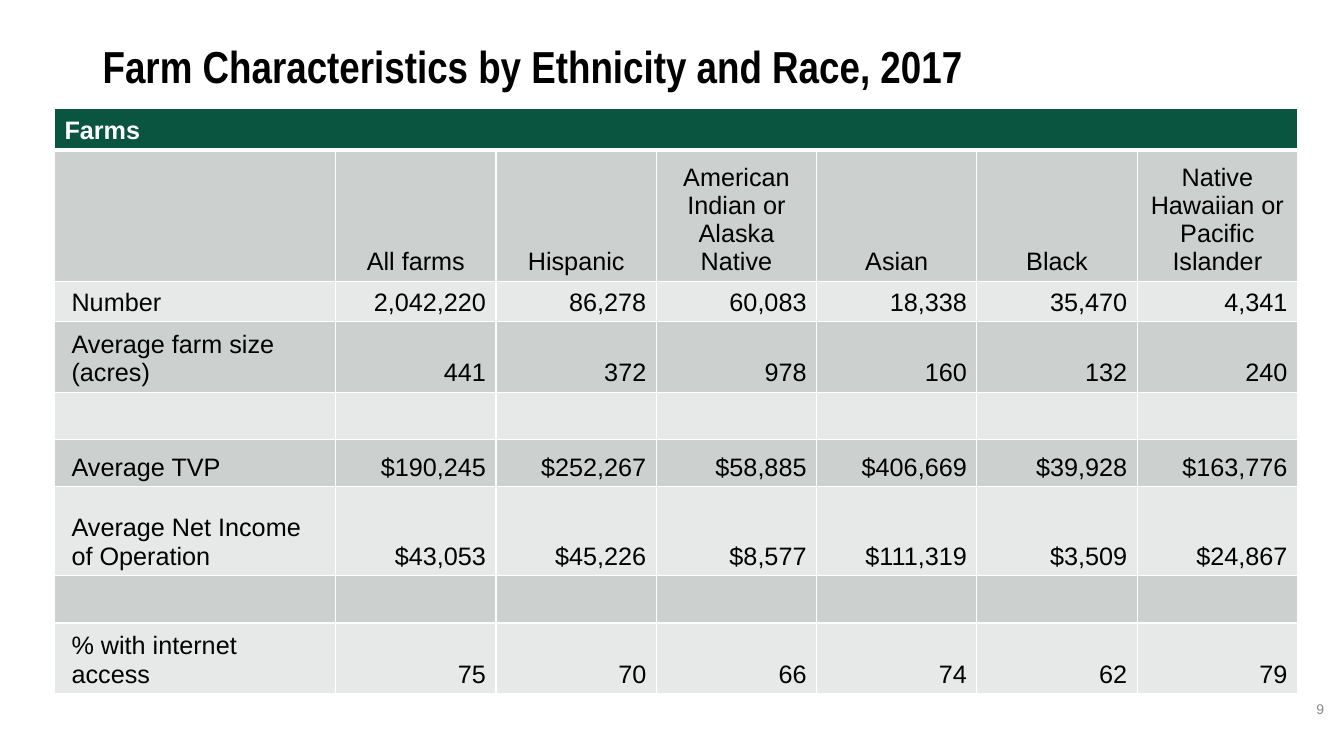
from dataclasses import dataclass

from lxml.etree import SubElement
from pptx import Presentation
from pptx.dml.color import RGBColor
from pptx.enum.text import MSO_ANCHOR, PP_ALIGN
from pptx.oxml.ns import qn
from pptx.util import Inches, Pt

COLORS = {
    "header": "0A5540",
    "dark_band": "CCD1CF",
    "light_band": "E7E9E8",
    "white": "FFFFFF",
    "black": "000000",
    "gray": "8C8C8C",
}
LABEL_WIDTH, VALUE_WIDTH = 2.79, 1.59
LABEL_INSET = 0.17


@dataclass
class FarmRow:
    height: float
    label: str = ""
    values: tuple[str, ...] = ()
    align: PP_ALIGN = PP_ALIGN.RIGHT


FARM_ROWS = [
    FarmRow(1.14, "", ("All farms", "Hispanic", "American Indian or Alaska Native",
                       "Asian", "Black", "Native Hawaiian or Pacific Islander"),
            PP_ALIGN.CENTER),
    FarmRow(0.35, "Number", ("2,042,220", "86,278", "60,083", "18,338", "35,470", "4,341")),
    FarmRow(0.62, "Average farm size (acres)", ("441", "372", "978", "160", "132", "240")),
    FarmRow(0.47),
    FarmRow(0.47, "Average TVP",
            ("$190,245", "$252,267", "$58,885", "$406,669", "$39,928", "$163,776")),
    FarmRow(0.88, "Average Net Income of Operation",
            ("$43,053", "$45,226", "$8,577", "$111,319", "$3,509", "$24,867")),
    FarmRow(0.47),
    FarmRow(0.62, "% with internet access", ("75", "70", "66", "74", "62", "79")),
]


def write_text(frame, text: str, *, size: float = 18, font: str = "Arial",
               color: str = "black", bold: bool = False,
               align: PP_ALIGN = PP_ALIGN.LEFT, line_spacing: float = 1.0) -> None:
    para = frame.paragraphs[0]
    para.alignment = align
    para.line_spacing = line_spacing
    span = para.add_run()
    span.text = text
    span.font.size = Pt(size)
    span.font.name = font
    span.font.bold = bold
    span.font.color.rgb = RGBColor.from_string(COLORS[color])


def add_text_box(page, left: float, top: float, width: float, height: float,
                 text: str, anchor: MSO_ANCHOR, **text_format) -> None:
    box = page.shapes.add_textbox(Inches(left), Inches(top), Inches(width), Inches(height))
    box.text_frame.word_wrap = True
    box.text_frame.vertical_anchor = anchor
    write_text(box.text_frame, text, **text_format)


def style_cell(cell, fill: str, bottom_border: float = 1) -> None:
    properties = cell._tc.get_or_add_tcPr()
    for side, width in (("L", 1), ("R", 1), ("T", 1), ("B", bottom_border)):
        line = SubElement(properties, qn(f"a:ln{side}"), w=str(Pt(width)))
        line_fill = SubElement(line, qn("a:solidFill"))
        SubElement(line_fill, qn("a:srgbClr"), val=COLORS["white"])
    cell.fill.solid()
    cell.fill.fore_color.rgb = RGBColor.from_string(COLORS[fill])
    cell.vertical_anchor = MSO_ANCHOR.BOTTOM


def add_farm_table(page) -> None:
    heights = [0.41] + [row.height for row in FARM_ROWS]
    widths = [LABEL_WIDTH] + [VALUE_WIDTH] * 6
    table = page.shapes.add_table(len(heights), len(widths), Inches(0.54), Inches(1.08),
                                  Inches(sum(widths)), Inches(sum(heights))).table
    table.first_row = False
    table.horz_banding = False
    for column, width in zip(table.columns, widths):
        column.width = Inches(width)
    for table_row, height in zip(table.rows, heights):
        table_row.height = Inches(height)

    # Header across all columns
    for cell in table.rows[0].cells:
        style_cell(cell, "header", bottom_border=3)
    header = table.cell(0, 0)
    header.merge(table.cell(0, len(widths) - 1))
    write_text(header.text_frame, "Farms", color="white", bold=True)

    # Banded body
    for index, row in enumerate(FARM_ROWS, start=1):
        cells = list(table.rows[index].cells)
        for cell in cells:
            style_cell(cell, "dark_band" if index % 2 else "light_band")
        if row.label:
            cells[0].margin_left = cells[0].margin_right = Inches(LABEL_INSET)
            write_text(cells[0].text_frame, row.label)
        for cell, value in zip(cells[1:], row.values):
            write_text(cell.text_frame, value, align=row.align)


def main() -> None:
    deck = Presentation()
    deck.slide_width, deck.slide_height = Inches(13.33), Inches(7.5)
    page = deck.slides.add_slide(deck.slide_layouts[6])

    # Title, page number and table
    add_text_box(page, 0.92, 0.4, 11.5, 0.6,
                 "Farm Characteristics by Ethnicity and Race, 2017", MSO_ANCHOR.TOP,
                 size=32, font="Arial Narrow", bold=True, line_spacing=0.9)
    add_text_box(page, 10.23, 6.83, 3, 0.4, "9", MSO_ANCHOR.MIDDLE,
                 size=10, color="gray", align=PP_ALIGN.RIGHT)
    add_farm_table(page)
    deck.save("out.pptx")


if __name__ == "__main__":
    main()
